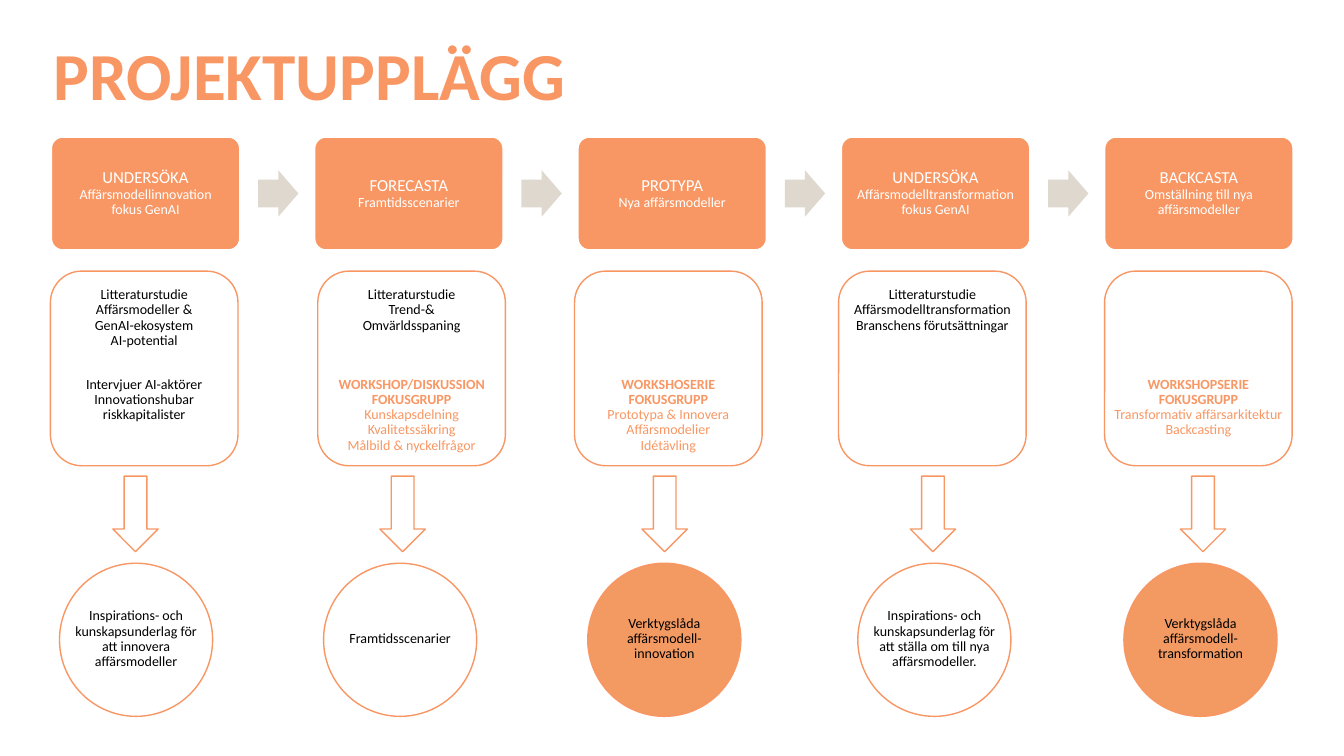
"""Build the project outline slide with five stages, their activities and results."""
import pptx
import pptx.dml.color
import pptx.enum.shapes
import pptx.enum.text
import pptx.util

Pt = pptx.util.Pt
SHAPE = pptx.enum.shapes.MSO_SHAPE
ANCHOR = pptx.enum.text.MSO_ANCHOR
ALIGN = pptx.enum.text.PP_ALIGN
COLORS = {"orange": "F89764", "disc": "F39962", "sand": "DED8CE",
          "white": "FFFFFF", "black": "000000"}


def draw(kind, left, top, width, height, fill=None, line=None):
    shape = slide.shapes.add_shape(kind, Pt(left), Pt(top), Pt(width), Pt(height))
    shape.shadow.inherit = False
    if fill:
        shape.fill.solid()
        shape.fill.fore_color.rgb = pptx.dml.color.RGBColor.from_string(COLORS[fill])
    else:
        shape.fill.background()
    if line:
        shape.line.color.rgb = pptx.dml.color.RGBColor.from_string(COLORS[line])
        shape.line.width = Pt(1)
    else:
        shape.line.fill.background()
    return shape


def write(frame, text, color, anchor=ANCHOR.TOP, first_size=10, bold_lines=0):
    frame.text = text
    frame.word_wrap = True
    frame.vertical_anchor = anchor
    for number, paragraph in enumerate(frame.paragraphs):
        paragraph.alignment = ALIGN.CENTER
        paragraph.line_spacing = 0.9
        for run in paragraph.runs:
            run.font.name = "Calibri"
            run.font.size = Pt(10 if number else first_size)
            run.font.bold = number < bold_lines
            run.font.color.rgb = pptx.dml.color.RGBColor.from_string(COLORS[color])


deck = pptx.Presentation()
deck.slide_width, deck.slide_height = Pt(960), Pt(540)
slide = deck.slides.add_slide(deck.slide_layouts[6])

STEP = 188.1
stages = [
    "UNDERSÖKA\nAffärsmodellinnovation\nfokus GenAI",
    "FORECASTA\nFramtidsscenarier",
    "PROTYPA\nNya affärsmodeller",
    "UNDERSÖKA\nAffärsmodelltransformation\nfokus GenAI",
    "BACKCASTA\nOmställning till nya affärsmodeller",
]
for index, stage in enumerate(stages):
    header = draw(SHAPE.ROUNDED_RECTANGLE, 36.7 + STEP * index, 97.9, 134.6, 80.6,
                  "orange", "white")
    header.adjustments[0] = 0.1
    frame = header.text_frame
    frame.margin_left = frame.margin_right = Pt(3.6)
    write(frame, stage, "white", ANCHOR.MIDDLE, first_size=12)
    if index < len(stages) - 1:
        next_arrow = draw(SHAPE.RIGHT_ARROW, 184.4 + STEP * index, 121.6, 28.8, 33.2, "sand")
        next_arrow.adjustments[0] = 0.6

activities = [
    (36, "Litteraturstudie\nAffärsmodeller &\nGenAI-ekosystem\nAI-potential",
     "Intervjuer AI-aktörer\nInnovationshubar\nriskkapitalister", "black", 0),
    (227, "Litteraturstudie\nTrend-&\nOmvärldsspaning",
     "WORKSHOP/DISKUSSION\nFOKUSGRUPP\nKunskapsdelning\nKvalitetssäkring\n"
     "Målbild & nyckelfrågor", "orange", 2),
    (410.4, "", "WORKSHOSERIE\nFOKUSGRUPP\nPrototypa & Innovera\nAffärsmodelier\nIdétävling",
     "orange", 2),
    (599, "Litteraturstudie\nAffärsmodelltransformation\nBranschens förutsättningar",
     "", "black", 0),
    (789, "", "WORKSHOPSERIE\nFOKUSGRUPP\nTransformativ affärsarkitektur\nBackcasting",
     "orange", 2),
]
for left, study, session, session_color, bold_lines in activities:
    draw(SHAPE.ROUNDED_RECTANGLE, left, 193.7, 134, 139, line="orange")
    for top, text, color, bold in ((202, study, "black", 0),
                                   (266, session, session_color, bold_lines)):
        if text:
            activity = slide.shapes.add_textbox(Pt(left - 2), Pt(top), Pt(138), Pt(66))
            write(activity.text_frame, text, color, bold_lines=bold)

results = [
    (80.6, 42.5, "Inspirations- och kunskapsunderlag för att innovera affärsmodeller", None),
    (271.4, 231.1, "Framtidsscenarier", None),
    (458.6, 419.8, "Verktygslåda affärsmodell-innovation", "disc"),
    (650.2, 612.7, "Inspirations- och kunskapsunderlag för att ställa om till nya "
     "affärsmodeller.", None),
    (843.1, 802.8, "Verktygslåda affärsmodell-transformation", "disc"),
]
for arrow_left, circle_left, result, fill in results:
    draw(SHAPE.DOWN_ARROW, arrow_left, 340.1, 32.4, 54, line="orange")
    draw(SHAPE.OVAL, circle_left, 402.3, 109.4, 109.4, fill, "orange")
    outcome = slide.shapes.add_textbox(Pt(circle_left), Pt(401.8), Pt(109.4), Pt(109.4))
    write(outcome.text_frame, result, "black", ANCHOR.MIDDLE)

title = slide.shapes.add_textbox(Pt(31), Pt(20.2), Pt(480), Pt(65.5))
title.text_frame.word_wrap = True
heading = title.text_frame.paragraphs[0]
heading.text = "PROJEKTUPPLÄGG"
heading.runs[0].font.name = "Calibri"
heading.runs[0].font.size = Pt(48)
heading.runs[0].font.bold = True
heading.runs[0].font.color.rgb = pptx.dml.color.RGBColor.from_string(COLORS["orange"])

deck.save("out.pptx")
